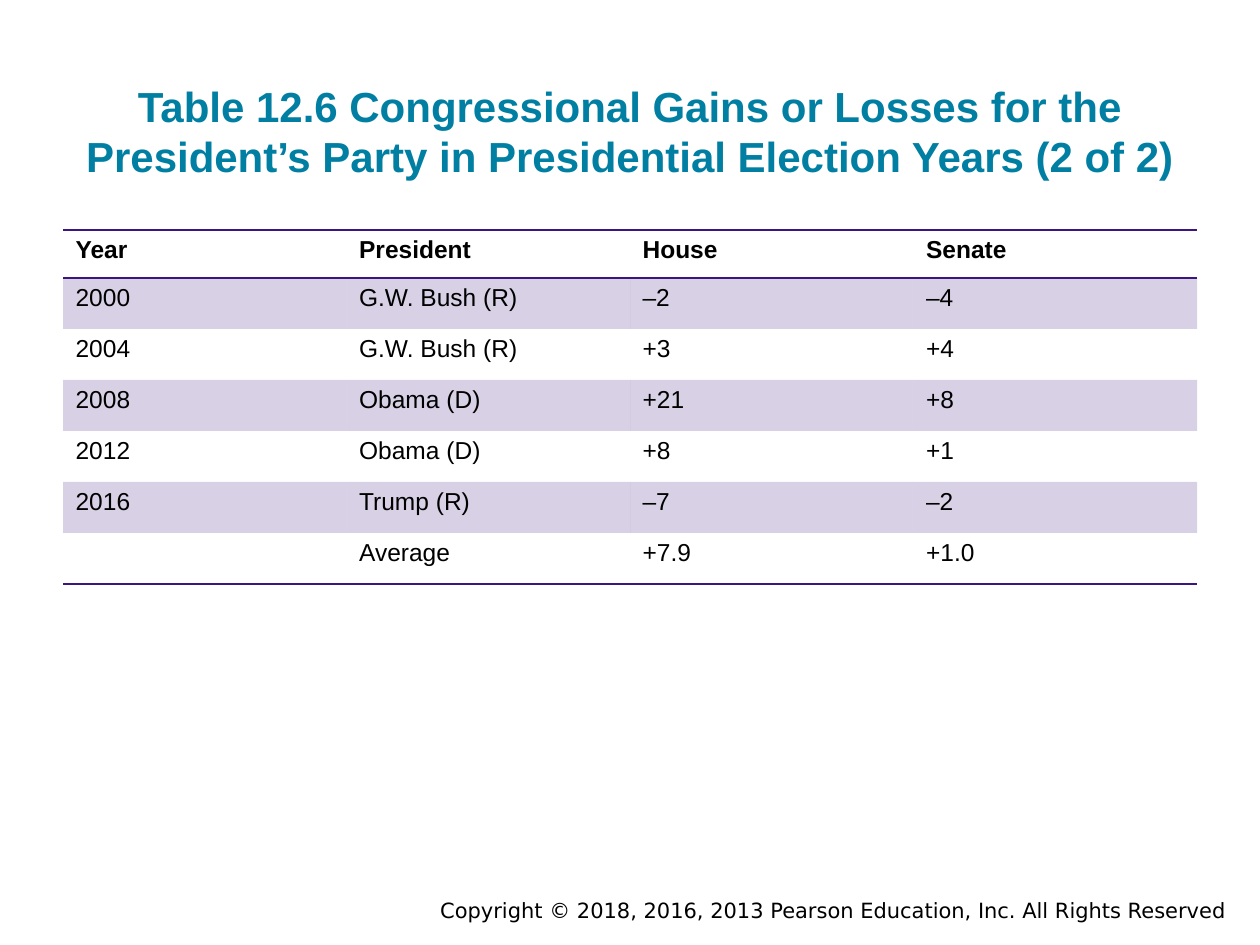
import pptx
import pptx.dml.color
import pptx.enum.text
import pptx.oxml.ns
import pptx.util
from dataclasses import dataclass
from lxml import etree

SCALE = 914400 / 126  # EMU in one px
PLAIN = "{2D5ABB26-0587-4C30-8999-92F81FD0307C}"  # table style without bands or grid
ALIGN = pptx.enum.text.PP_ALIGN
ANCHOR = pptx.enum.text.MSO_ANCHOR


@dataclass(frozen=True)
class Theme:
    title: str = "007FA3"
    ink: str = "000000"
    rule: str = "3C1581"
    tint: int = 20  # percent opacity of the banded rows
    big: int = 24
    body: int = 14
    small: int = 12
    font: str = "Arial"
    foot: str = "DejaVu Sans"


def px(count):
    return pptx.util.Emu(round(count * SCALE))


def rgb(code):
    return pptx.dml.color.RGBColor.from_string(code)


def node(parent, tag, **attrs):
    return etree.SubElement(parent, pptx.oxml.ns.qn(tag), **attrs)


class Deck:
    def __init__(self, theme):
        self.theme = theme
        self.prs = pptx.Presentation()
        self.prs.slide_width, self.prs.slide_height = px(1260), px(945)
        self.slide = self.prs.slides.add_slide(self.prs.slide_layouts[6])

    def style(self, para, size, color, name, bold=False):
        font = para.font
        font.size, font.name, font.bold = pptx.util.Pt(size), name, bold
        font.color.rgb = rgb(color)

    def text(self, box, words, size, color, name, align, anchor, pad, bold=False):
        frame = self.slide.shapes.add_textbox(*map(px, box)).text_frame
        frame.word_wrap = True
        frame.vertical_anchor = anchor
        frame.margin_top = frame.margin_bottom = px(pad)
        para = frame.paragraphs[0]
        para.text, para.alignment = words, align
        self.style(para, size, color, name, bold)

    def rule(self, cell, *sides):
        props = cell._tc.get_or_add_tcPr()
        for side in sides:
            line = node(props, f"a:ln{side}", w=str(pptx.util.Pt(1)))
            node(node(line, "a:solidFill"), "a:srgbClr", val=self.theme.rule)

    def shade(self, cell):
        fill = node(cell._tc.get_or_add_tcPr(), "a:solidFill")
        color = node(fill, "a:srgbClr", val=self.theme.rule)
        node(color, "a:alpha", val=str(self.theme.tint * 1000))

    def table(self, box, rows, head, step):
        look = self.theme
        grid = self.slide.shapes.add_table(
            len(rows), len(rows[0]), *map(px, box)).table
        grid.horz_banding = False
        grid._tbl.tblPr.find(pptx.oxml.ns.qn("a:tableStyleId")).text = PLAIN
        last = len(rows) - 1
        for r, row in enumerate(rows):
            grid.rows[r].height = px(step if r else head)
            for c, words in enumerate(row):
                cell = grid.cell(r, c)
                cell.text = words
                self.style(cell.text_frame.paragraphs[0], look.body,
                           look.ink, look.font, r == 0)
                if r == 0:
                    self.rule(cell, "T", "B")
                elif r == last:
                    self.rule(cell, "B")
                if r % 2:
                    self.shade(cell)


def main():
    look = Theme()
    deck = Deck(look)

    # Footer
    deck.text((252, 892, 987, 38),
              "Copyright © 2018, 2016, 2013 Pearson Education, Inc. All Rights Reserved",
              look.small, look.ink, look.foot, ALIGN.RIGHT, ANCHOR.TOP, 6)

    # Title
    deck.text((63, 39, 1134, 155),
              "Table 12.6 Congressional Gains or Losses for the "
              "President’s Party in Presidential Election Years (2 of 2)",
              look.big, look.title, look.font, ALIGN.CENTER, ANCHOR.BOTTOM, 13, True)

    # Election results
    rows = [
        ("Year", "President", "House", "Senate"),
        ("2000", "G.W. Bush (R)", "–2", "–4"),
        ("2004", "G.W. Bush (R)", "+3", "+4"),
        ("2008", "Obama (D)", "+21", "+8"),
        ("2012", "Obama (D)", "+8", "+1"),
        ("2016", "Trump (R)", "–7", "–2"),
        ("", "Average", "+7.9", "+1.0"),
    ]
    deck.table((63, 230, 1134, 354), rows, head=48, step=51)

    deck.prs.save("out.pptx")


if __name__ == "__main__":
    main()
